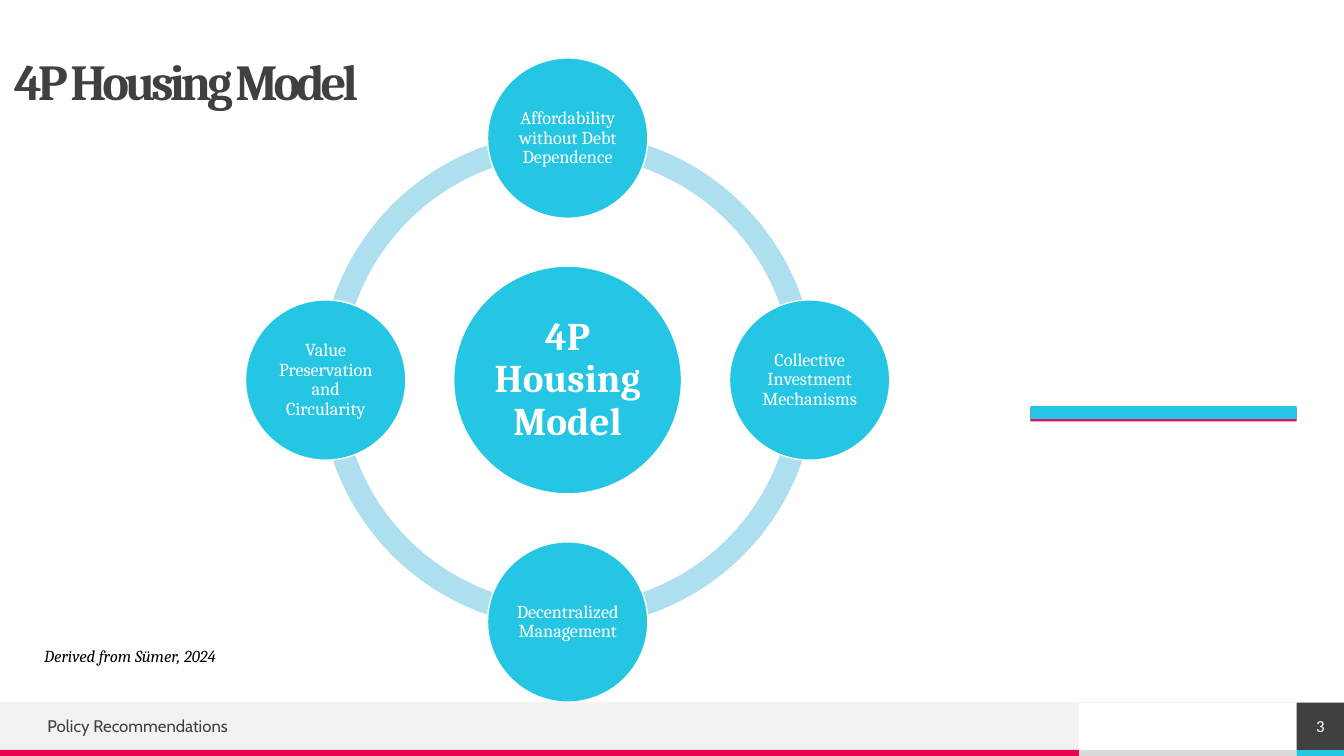
"""Build the 4P Housing Model slide: a ring of four principles around a hub."""
import math
from dataclasses import dataclass, field

from lxml import etree
from pptx import Presentation
from pptx.dml.color import RGBColor
from pptx.enum.shapes import MSO_CONNECTOR, MSO_SHAPE
from pptx.enum.text import MSO_ANCHOR, MSO_AUTO_SIZE, PP_ALIGN
from pptx.oxml.ns import qn
from pptx.util import Inches, Pt

RECTANGLE, OVAL, ARC = MSO_SHAPE.RECTANGLE, MSO_SHAPE.OVAL, MSO_SHAPE.BLOCK_ARC
STRAIGHT = MSO_CONNECTOR.STRAIGHT
MIDDLE, TOP = MSO_ANCHOR.MIDDLE, MSO_ANCHOR.TOP
LEFT, CENTER = PP_ALIGN.LEFT, PP_ALIGN.CENTER
NO_AUTOFIT = MSO_AUTO_SIZE.NONE

WHITE, BLACK, DARK = "FFFFFF", "000000", "404040"
CYAN, PALE_CYAN, PINK = "25C6E3", "ADDFEF", "E80554"
PALE_GRAY, GRAY = "F2F2F2", "DADADA"

SLIDE_WIDTH, SLIDE_HEIGHT = 13.33, 7.5
FOOTER_TOP, STRIP_TOP = 6.97, 7.44
FOOTER_WIDTH, NUMBER_LEFT = 10.7, 12.86
CENTER_X, CENTER_Y = 5.63, 3.77
RING_SIZE, RING_THICKNESS = 4.92, 0.046
ORBIT, HUB_SIZE, NODE_SIZE = 2.4, 2.26, 1.59
ARC_UNITS_PER_DEGREE = 0.6


@dataclass(frozen=True)
class Frame:
    """Left, top, width and height in inches."""
    left: float
    top: float
    width: float
    height: float

    def lengths(self) -> list:
        """Return the four lengths as Inches."""
        return [Inches(v) for v in (self.left, self.top, self.width, self.height)]


@dataclass(frozen=True)
class TextStyle:
    """Font values and paragraph layout."""
    color: str
    font: dict = field(default_factory=dict)
    align: PP_ALIGN = LEFT
    anchor: MSO_ANCHOR = MIDDLE
    insets: tuple = (0, 0)
    line_spacing: float = 1.0


@dataclass(frozen=True)
class Bar:
    """A plain filled rectangle."""
    frame: Frame
    color: str


@dataclass(frozen=True)
class Label:
    """A text box with its wording and style."""
    frame: Frame
    text: str
    style: TextStyle


def cambria(size: float, **extra) -> dict:
    """Return font values for the main typeface."""
    return {"name": "Cambria", "size": Pt(size), **extra}


TITLE_STYLE = TextStyle(DARK, cambria(36, bold=True), insets=(0.2, 0.2), line_spacing=0.9)
HUB_STYLE = TextStyle(WHITE, cambria(28, bold=True), CENTER, insets=(0.04, 0.04), line_spacing=0.9)
NODE_STYLE = TextStyle(WHITE, cambria(13), CENTER, insets=(0.02, 0.02), line_spacing=0.9)
NUMBER_STYLE = TextStyle(WHITE, {"name": "Calibri", "size": Pt(12)}, CENTER)
FOOTER_STYLE = TextStyle(DARK, {"name": "Cabin", "size": Pt(12)})
SOURCE_STYLE = TextStyle(BLACK, cambria(12, italic=True), anchor=TOP, insets=(0.1, 0.05))

STRIP_HEIGHT = SLIDE_HEIGHT - STRIP_TOP
FOOTER_HEIGHT = STRIP_TOP - FOOTER_TOP
NUMBER_WIDTH = SLIDE_WIDTH - NUMBER_LEFT
NUMBER_FRAME = Frame(NUMBER_LEFT, FOOTER_TOP, NUMBER_WIDTH, FOOTER_HEIGHT)
BARS = (
    Bar(Frame(FOOTER_WIDTH, STRIP_TOP, NUMBER_LEFT - FOOTER_WIDTH, STRIP_HEIGHT), GRAY),
    Bar(Frame(0, FOOTER_TOP, FOOTER_WIDTH, FOOTER_HEIGHT), PALE_GRAY),
    Bar(Frame(0, STRIP_TOP, FOOTER_WIDTH, STRIP_HEIGHT), PINK),
    Bar(Frame(NUMBER_LEFT, STRIP_TOP, NUMBER_WIDTH, STRIP_HEIGHT), CYAN),
    Bar(Frame(10.22, 4.05, 2.64, 0.13), PINK),
    Bar(Frame(10.22, 4.03, 2.64, 0.13), CYAN),
)
PRINCIPLES = (
    "Affordability without Debt Dependence",
    "Collective Investment Mechanisms",
    "Decentralized Management",
    "Value Preservation and Circularity",
)
LABELS = (
    Label(Frame(0.47, 7.04, 6.19, 0.32), "Policy Recommendations", FOOTER_STYLE),
    Label(Frame(0.34, 6.36, 2.13, 0.3), "Derived from Sümer, 2024", SOURCE_STYLE),
)


def rgb(color: str) -> RGBColor:
    """Turn a hex string into a colour."""
    return RGBColor.from_string(color)


def centered(x: float, y: float, size: float) -> Frame:
    """Return a square frame around a point."""
    return Frame(x - size / 2, y - size / 2, size, size)


def write(shape, text: str, style: TextStyle):
    """Fill a shape with one styled paragraph and return its run."""
    side, edge = (Inches(inset) for inset in style.insets)
    box = shape.text_frame
    layout = {"word_wrap": True, "auto_size": NO_AUTOFIT, "vertical_anchor": style.anchor,
              "margin_left": side, "margin_right": side,
              "margin_top": edge, "margin_bottom": edge}
    for name, value in layout.items():
        setattr(box, name, value)
    para = box.paragraphs[0]
    para.alignment = style.align
    para.line_spacing = style.line_spacing
    span = para.add_run()
    span.text = text
    for name, value in style.font.items():
        setattr(span.font, name, value)
    span.font.color.rgb = rgb(style.color)
    return span


def add_filled(page, kind: MSO_SHAPE, frame: Frame, color: str, outline: str = ""):
    """Add a flat preset shape, outlined only when a colour is given."""
    shape = page.shapes.add_shape(kind, *frame.lengths())
    shape.shadow.inherit = False
    shape.fill.solid()
    shape.fill.fore_color.rgb = rgb(color)
    if outline:
        shape.line.color.rgb = rgb(outline)
        shape.line.width = Pt(1)
    else:
        shape.line.fill.background()
    return shape


def add_title(page) -> None:
    """Place the title with tightened letter spacing."""
    title = page.shapes.title
    title.left, title.top, title.width, title.height = Frame(-0.06, 0.3, 5.08, 1.08).lengths()
    title.fill.solid()
    title.fill.fore_color.rgb = rgb(WHITE)
    span = write(title, "4P Housing Model", TITLE_STYLE)
    span.font._element.set("spc", "-300")


def add_footer_rule(page) -> None:
    """Draw the thin rule along the top of the footer."""
    top = Inches(FOOTER_TOP)
    rule = page.shapes.add_connector(STRAIGHT, Inches(SLIDE_WIDTH), top, 0, top)
    rule.line.color.rgb = rgb(PALE_GRAY)
    rule.line.width = Pt(0.5)
    etree.SubElement(rule._element.spPr, qn("a:effectLst"))


def add_cycle(page) -> None:
    """Draw the ring in quarters, then the hub and the principles."""
    for start in (180, 90, 0, 270):
        arc = add_filled(page, ARC, centered(CENTER_X, CENTER_Y, RING_SIZE), PALE_CYAN)
        arc.adjustments[0] = start * ARC_UNITS_PER_DEGREE
        arc.adjustments[1] = (start + 90) % 360 * ARC_UNITS_PER_DEGREE
        arc.adjustments[2] = RING_THICKNESS
    hub = add_filled(page, OVAL, centered(CENTER_X, CENTER_Y, HUB_SIZE), CYAN, WHITE)
    write(hub, "4P Housing Model", HUB_STYLE)
    for index, principle in enumerate(PRINCIPLES):
        angle = math.tau * index / len(PRINCIPLES)
        x = CENTER_X + ORBIT * math.sin(angle)
        y = CENTER_Y - ORBIT * math.cos(angle)
        node = add_filled(page, OVAL, centered(x, y, NODE_SIZE), CYAN, WHITE)
        write(node, principle, NODE_STYLE)


def main() -> None:
    """Build and save the deck."""
    deck = Presentation()
    deck.slide_width, deck.slide_height = Inches(SLIDE_WIDTH), Inches(SLIDE_HEIGHT)
    page = deck.slides.add_slide(deck.slide_layouts.get_by_name("Title Only"))
    add_title(page)
    for bar in BARS:
        add_filled(page, RECTANGLE, bar.frame, bar.color)
    add_footer_rule(page)
    write(add_filled(page, RECTANGLE, NUMBER_FRAME, DARK), "3", NUMBER_STYLE)
    add_cycle(page)
    for label in LABELS:
        write(page.shapes.add_textbox(*label.frame.lengths()), label.text, label.style)
    deck.save("out.pptx")


if __name__ == "__main__":
    main()
